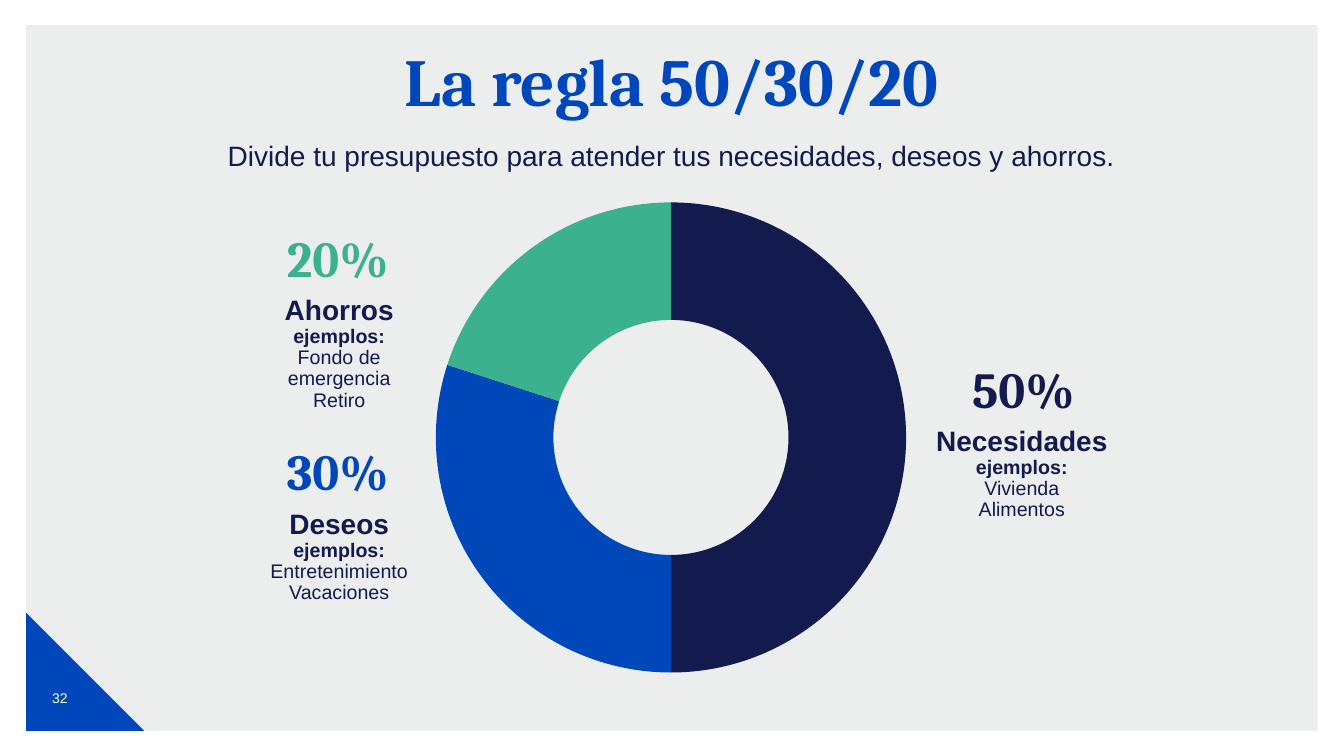
from copy import deepcopy

from lxml import etree
from pptx import Presentation
from pptx import util as u
from pptx.chart.data import CategoryChartData
from pptx.dml.color import RGBColor
from pptx.enum import chart as ch, shapes as sh, text as tx
from pptx.oxml.ns import qn

# Content
TITLE = "La regla 50/30/20"
LEAD = "Divide tu presupuesto para atender tus necesidades, deseos y ahorros."
PAGE = "32"
# share, colour, name, examples, (left of share, left of text, top)
PARTS = [
    (50, "navy", "Necesidades", ["Vivienda", "Alimentos"], (9.28, 9.25, 3.57)),
    (30, "sky", "Deseos", ["Entretenimiento", "Vacaciones"], (2.48, 2.48, 4.39)),
    (20, "green", "Ahorros", ["Fondo de emergencia", "Retiro"], (2.48, 2.48, 2.27)),
]

THEME = {
    "navy": "131A4D", "blue": "0047BB", "sky": "0047BA", "green": "3CB18E",
    "grey": "D0D3D4", "white": "FFFFFF",
    "head": "Cambria", "body": "Arial",
    "title": 48, "share": 36, "lead": 20, "name": 20, "note": 14, "small": 10,
}


def rgb(key):
    return RGBColor.from_string(THEME[key])


def style(font, size, color, face="body", bold=False):
    form = {"size": u.Pt(THEME[size]), "name": THEME[face], "bold": bold}
    for key, val in form.items():
        setattr(font, key, val)
    font.color.rgb = rgb(color)


def place(shape, box):
    for key, val in zip(("left", "top", "width", "height"), box):
        setattr(shape, key, u.Inches(val))


def write(shape, lines, gap=0.9, side=0, anchor=tx.MSO_ANCHOR.TOP):
    """Fill one centred paragraph; each line is (text, style values)."""
    frame = shape.text_frame
    form = {"word_wrap": True, "auto_size": tx.MSO_AUTO_SIZE.NONE,
            "vertical_anchor": anchor,
            "margin_left": u.Inches(side), "margin_right": u.Inches(side),
            "margin_top": u.Inches(0.05), "margin_bottom": u.Inches(0.05)}
    for key, val in form.items():
        setattr(frame, key, val)
    para = frame.paragraphs[0]
    form = {"alignment": tx.PP_ALIGN.CENTER, "line_spacing": gap,
            "space_before": u.Pt(0)}
    for key, val in form.items():
        setattr(para, key, val)
    for i, (words, look) in enumerate(lines):
        if i:
            # The break keeps the type size of the line it ends
            para.add_line_break()
            para._p[-1].append(deepcopy(run._r.rPr))
        run = para.add_run()
        run.text = words
        style(run.font, *look)
    return para


deck = Presentation()
deck.slide_width, deck.slide_height = u.Inches(13.33), u.Inches(7.5)
slide = deck.slides.add_slide(deck.slide_layouts[1])
shapes = slide.shapes


def label(box, lines, **more):
    item = shapes.add_textbox(*map(u.Inches, box))
    write(item, lines, **more)


# Grey panel and corner, behind the placeholders
BACK = [
    (sh.MSO_SHAPE.RECTANGLE, (0.26, 0.25, 12.81, 7), "grey"),
    (sh.MSO_SHAPE.RIGHT_TRIANGLE, (0.26, 6.08, 1.17, 1.17), "blue"),
]
for i, (kind, box, color) in enumerate(BACK):
    item = shapes.add_shape(kind, *map(u.Inches, box))
    item.shadow.inherit = False
    item.fill.solid()
    item.fill.fore_color.rgb = rgb(color)
    item.line.fill.background()
    if color == "grey":
        tone = item.element.find(".//" + qn("a:srgbClr"))
        etree.SubElement(tone, qn("a:alpha"), val="40000")
    item.element.getparent().insert(2 + i, item.element)

# Page number
label((0.32, 6.63, 0.55, 0.58), [(PAGE, ("small", "white"))],
      gap=1.0, side=0.1, anchor=tx.MSO_ANCHOR.MIDDLE)

# Title and lead
title, lead = shapes.title, slide.placeholders[1]
place(title, (1.63, 0.43, 10.06, 0.67))
write(title, [(TITLE, ("title", "blue", "head", True))])
place(lead, (1.63, 1.39, 10.06, 0.38))
para = write(lead, [(LEAD, ("lead", "navy"))], gap=0.8)
props = para._p.get_or_add_pPr()
props.set("marL", "0")
props.set("indent", "0")
etree.SubElement(props, qn("a:buNone"))

# Doughnut chart
data = CategoryChartData()
data.categories = [str(i + 1) for i in range(len(PARTS))]
data.add_series("Series 1", [part[0] for part in PARTS])
ring = shapes.add_chart(ch.XL_CHART_TYPE.DOUGHNUT,
                        *map(u.Inches, (2.96, 1.87, 7.39, 4.94)), data).chart
ring.has_legend = ring.has_title = False
style(ring.font, "small", "navy")
plot = ring.plots[0]
plot.vary_by_categories = True
plot._element.find(qn("c:holeSize")).set("val", "75")
for i, part in enumerate(PARTS):
    form = plot.series[0].points[i].format
    form.fill.solid()
    form.fill.fore_color.rgb = rgb(part[1])
    form.line.fill.background()

# Share and examples for each part
for share, color, name, notes, (left, text_left, top) in PARTS:
    label((left, top, 1.74, 0.67),
          [(f"{share}%", ("share", color, "head", True))])
    lines = [(name, ("name", "navy", "body", True)),
             ("ejemplos:", ("note", "navy", "body", True))]
    lines += [(note, ("note", "navy")) for note in notes]
    label((text_left, top + 0.62, 1.77, 1.35), lines)

deck.save("out.pptx")
